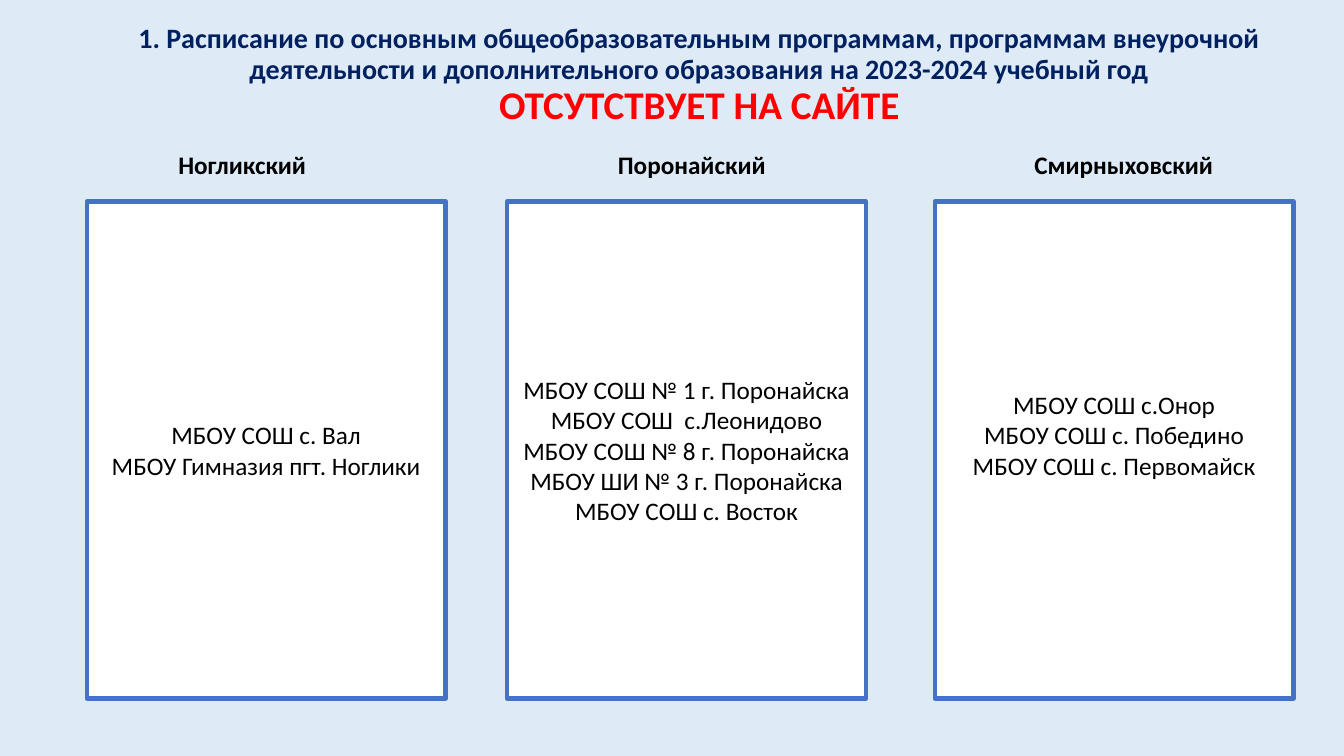
from pptx import Presentation
from pptx.dml.color import RGBColor
from pptx.enum.shapes import MSO_SHAPE
from pptx.enum.text import MSO_ANCHOR, MSO_AUTO_SIZE, PP_ALIGN
from pptx.util import Inches, Pt


def color(code):
    return RGBColor.from_string(code)


class Page:
    font = "Calibri"
    back, navy, red = "DEEBF7", "002060", "FF0000"
    blue, white, black = "4472C4", "FFFFFF", "000000"

    def __init__(self, deck):
        self.slide = deck.slides.add_slide(deck.slide_layouts[5])
        fill = self.slide.background.fill
        fill.solid()
        fill.fore_color.rgb = color(self.back)

    def add_text(self, para, text, size, tint, bold=False):
        """Add one styled run to a paragraph."""
        run = para.add_run()
        run.text = text
        run.font.name = self.font
        run.font.size = Pt(size)
        run.font.bold = bold
        run.font.color.rgb = color(tint)

    def title(self, text, alert):
        shape = self.slide.shapes.title
        shape.left, shape.top = Inches(0.86), Inches(0.08)
        shape.width, shape.height = Inches(12.15), Inches(1.35)
        frame = shape.text_frame
        frame.auto_size = MSO_AUTO_SIZE.NONE
        frame.vertical_anchor = MSO_ANCHOR.MIDDLE
        para = frame.paragraphs[0]
        para.alignment = PP_ALIGN.CENTER
        para.line_spacing = 0.9
        para.space_before = Pt(0)
        self.add_text(para, text, 20, self.navy, True)
        para.add_line_break()
        self.add_text(para, alert, 28, self.red, True)

    def label(self, text, left, width):
        box = self.slide.shapes.add_textbox(
            Inches(left), Inches(1.43), Inches(width), Inches(0.4))
        frame = box.text_frame
        frame.word_wrap = False
        frame.auto_size = MSO_AUTO_SIZE.SHAPE_TO_FIT_TEXT
        self.add_text(frame.paragraphs[0], text, 18, self.black, True)

    def panel(self, lines, left, foot):
        """Draw a framed list of schools; foot is the bottom margin."""
        box = self.slide.shapes.add_shape(
            MSO_SHAPE.RECTANGLE, Inches(left), Inches(2),
            Inches(3.56), Inches(4.93))
        box.shadow.inherit = False
        box.fill.solid()
        box.fill.fore_color.rgb = color(self.white)
        box.line.color.rgb = color(self.blue)
        box.line.width = Pt(3)
        frame = box.text_frame
        frame.word_wrap = True
        frame.vertical_anchor = MSO_ANCHOR.MIDDLE
        frame.margin_bottom = Inches(foot)
        for i, line in enumerate(lines):
            para = frame.add_paragraph() if i else frame.paragraphs[0]
            para.alignment = PP_ALIGN.CENTER
            self.add_text(para, line, 18, self.black)


# district, label left, label width, panel left, panel foot, schools
AREAS = [
    ("Ногликский", 1.67, 1.48, 0.86, 0.05,
     ["МБОУ СОШ с. Вал", "МБОУ Гимназия пгт. Ноглики"]),
    ("Поронайский", 6.03, 1.68, 5.03, 0.05,
     ["МБОУ СОШ № 1 г. Поронайска", "МБОУ СОШ  с.Леонидово",
      "МБОУ СОШ № 8 г. Поронайска", "МБОУ ШИ № 3 г. Поронайска",
      "МБОУ СОШ с. Восток"]),
    ("Смирныховский", 10.16, 1.99, 9.27, 0.35,
     ["МБОУ СОШ с.Онор", "МБОУ СОШ с. Победино",
      "МБОУ СОШ с. Первомайск"]),
]


def main():
    deck = Presentation()
    deck.slide_width, deck.slide_height = Inches(13.33), Inches(7.5)
    page = Page(deck)
    page.title(
        "1. Расписание по основным общеобразовательным программам, "
        "программам внеурочной деятельности и дополнительного образования "
        "на 2023-2024 учебный год", "ОТСУТСТВУЕТ НА САЙТЕ")
    for name, start, width, left, foot, schools in AREAS:
        page.label(name, start, width)
        page.panel(schools, left, foot)
    deck.save("out.pptx")


if __name__ == "__main__":
    main()
